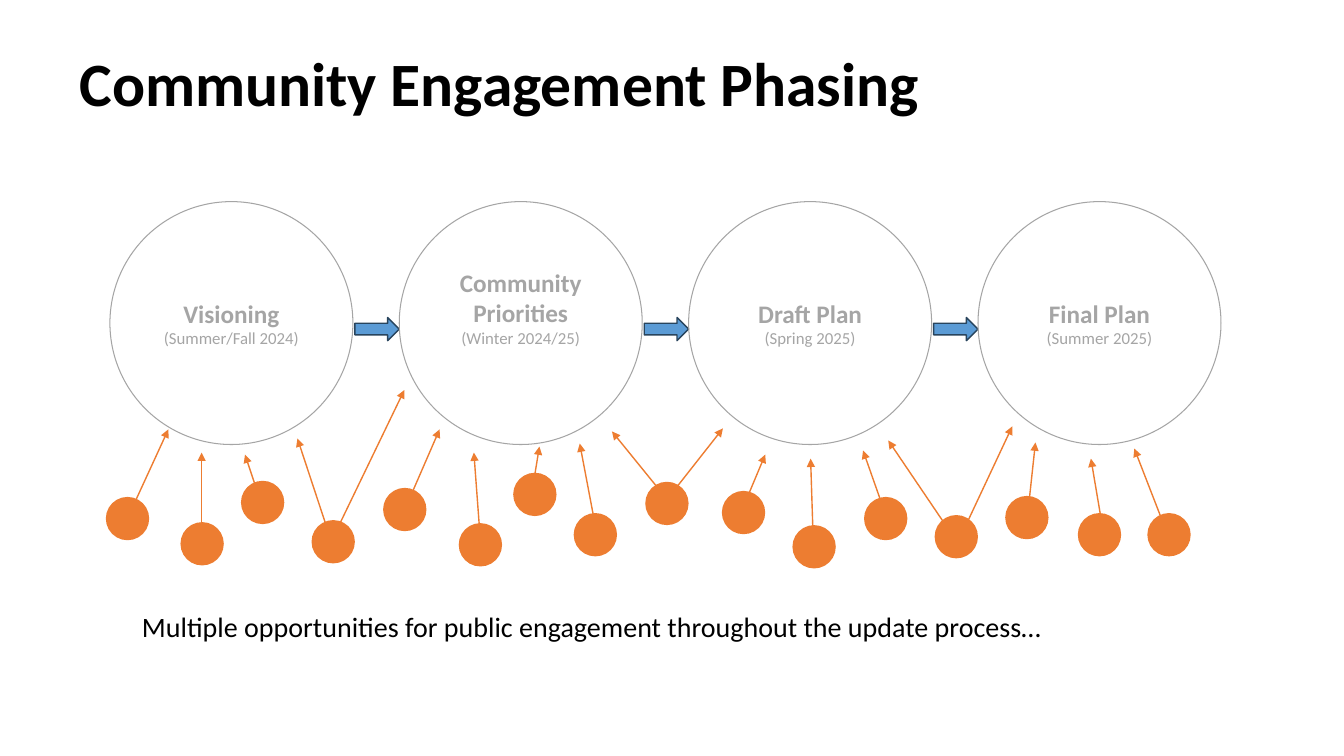
from lxml import etree
from pptx import Presentation
from pptx.dml.color import RGBColor
from pptx.enum import shapes, text
from pptx.oxml.ns import qn
from pptx.util import Inches, Pt

BLACK = RGBColor(0x00, 0x00, 0x00)
GRAY = RGBColor(0xA5, 0xA5, 0xA5)
ORANGE = RGBColor(0xED, 0x7D, 0x31)
BLUE = RGBColor(0x5B, 0x9B, 0xD5)
NAVY = RGBColor(0x28, 0x44, 0x5D)

PHASE_LEFT, PHASE_TOP, PHASE_SIZE, PHASE_PITCH = 1.09, 2, 2.41, 2.87
DOT_SIZE = 0.43

TITLE = {"size": Pt(44), "bold": True}
CAPTION = {"size": Pt(20), "bold": False}
PHASE_NAME = {"size": Pt(18), "bold": True}
PHASE_DATE = {"size": Pt(12), "bold": False}

# Name lines, date, and bottom inset of each phase
PHASES = [
    (["Visioning"], "(Summer/Fall 2024)", 0.05),
    (["Community", "Priorities"], "(Winter 2024/25)", 0.36),
    (["Draft Plan"], "(Spring 2025)", 0.05),
    (["Final Plan"], "(Summer 2025)", 0.05),
]

# Left and top of each engagement dot, then its arrows as (start, tip)
ENGAGEMENTS = [
    (1.05, 4.93, [((1.27, 5.13), (1.67, 4.26))]),
    (1.79, 5.18, [((2.0, 5.4), (2.0, 4.49))]),
    (2.39, 4.77, [((2.6, 5.02), (2.43, 4.51))]),
    (3.09, 5.16, [((3.3, 5.41), (2.95, 4.35)), ((3.32, 5.3), (4.01, 3.87))]),
    (3.8, 4.84, [((4.03, 5.02), (4.36, 4.26))]),
    (4.55, 5.19, [((4.77, 5.43), (4.7, 4.49))]),
    (5.09, 4.69, [((5.28, 4.86), (5.35, 4.43))]),
    (5.69, 5.09, [((5.93, 5.35), (5.75, 4.4))]),
    (6.4, 4.78, [((6.58, 5.0), (7.17, 4.25)), ((6.67, 5.02), (6.07, 4.28))]),
    (7.16, 4.87, [((7.33, 5.13), (7.59, 4.51))]),
    (7.86, 5.21, [((8.07, 5.49), (8.04, 4.55))]),
    (8.57, 4.93, [((8.81, 5.18), (8.56, 4.47))]),
    (9.27, 5.11, [((9.46, 5.33), (8.81, 4.37)), ((9.51, 5.36), (10.04, 4.23))]),
    (9.97, 4.92, [((10.19, 5.13), (10.27, 4.39))]),
    (10.69, 5.09, [((10.95, 5.32), (10.82, 4.55))]),
    (11.38, 5.09, [((11.58, 5.3), (11.25, 4.45))]),
]


def write(paragraph, words, style, color):
    run = paragraph.add_run()
    run.text = words
    run.font.name = "Calibri"
    run.font.color.rgb = color
    for key, value in style.items():
        setattr(run.font, key, value)


def add_text(slide, box, words, style):
    frame = slide.shapes.add_textbox(*map(Inches, box)).text_frame
    frame.word_wrap = True
    write(frame.paragraphs[0], words, style, BLACK)
    return frame


def add_figure(slide, kind, box, fill=None, line=None, width=1):
    figure = slide.shapes.add_shape(kind, *map(Inches, box))
    figure.shadow.inherit = False
    if fill is None:
        figure.fill.background()
    else:
        figure.fill.solid()
        figure.fill.fore_color.rgb = fill
    if line is None:
        figure.line.fill.background()
    else:
        figure.line.color.rgb = line
        figure.line.width = Pt(width)
    return figure


def add_phase(slide, left, names, date, bottom_inset):
    box = (left, PHASE_TOP, PHASE_SIZE, PHASE_SIZE)
    circle = add_figure(slide, shapes.MSO_SHAPE.OVAL, box, line=GRAY, width=0.75)
    frame = circle.text_frame
    frame.word_wrap = True
    frame.vertical_anchor = text.MSO_ANCHOR.MIDDLE
    frame.margin_bottom = Inches(bottom_inset)
    rows = [(name, PHASE_NAME) for name in names] + [(date, PHASE_DATE)]
    for i, (words, style) in enumerate(rows):
        paragraph = frame.add_paragraph() if i else frame.paragraphs[0]
        paragraph.alignment = text.PP_ALIGN.CENTER
        write(paragraph, words, style, GRAY)


def add_arrow(slide, start, tip):
    arrow = slide.shapes.add_connector(
        shapes.MSO_CONNECTOR.STRAIGHT, *map(Inches, start + tip))
    arrow.line.color.rgb = ORANGE
    arrow.line.width = Pt(1)
    etree.SubElement(arrow.line._get_or_add_ln(), qn("a:tailEnd"), type="triangle")
    etree.SubElement(arrow._element.spPr, qn("a:effectLst"))


def main():
    prs = Presentation()
    prs.slide_width, prs.slide_height = Inches(13.33), Inches(7.5)
    slide = prs.slides.add_slide(prs.slide_layouts[6])

    # Title
    title = add_text(slide, (0.69, 0.47, 10, 0.77), "Community Engagement Phasing", TITLE)
    title.vertical_anchor = text.MSO_ANCHOR.MIDDLE
    title.paragraphs[0].line_spacing = 0.9

    # Phases, with a block arrow from each to the next
    for i, phase in enumerate(PHASES):
        left = PHASE_LEFT + i * PHASE_PITCH
        add_phase(slide, left, *phase)
        if i < len(PHASES) - 1:
            add_figure(slide, shapes.MSO_SHAPE.RIGHT_ARROW,
                       (left + 2.43, 3.15, 0.44, 0.23), BLUE, NAVY)

    # Engagement dots and the phases they feed
    for left, top, arrows in ENGAGEMENTS:
        add_figure(slide, shapes.MSO_SHAPE.OVAL, (left, top, DOT_SIZE, DOT_SIZE), ORANGE)
        for start, tip in arrows:
            add_arrow(slide, start, tip)

    # Caption
    caption = add_text(
        slide, (1.31, 6, 10.35, 0.44),
        "Multiple opportunities for public engagement throughout the update process…",
        CAPTION)
    caption.auto_size = text.MSO_AUTO_SIZE.SHAPE_TO_FIT_TEXT

    prs.save("out.pptx")


if __name__ == "__main__":
    main()
